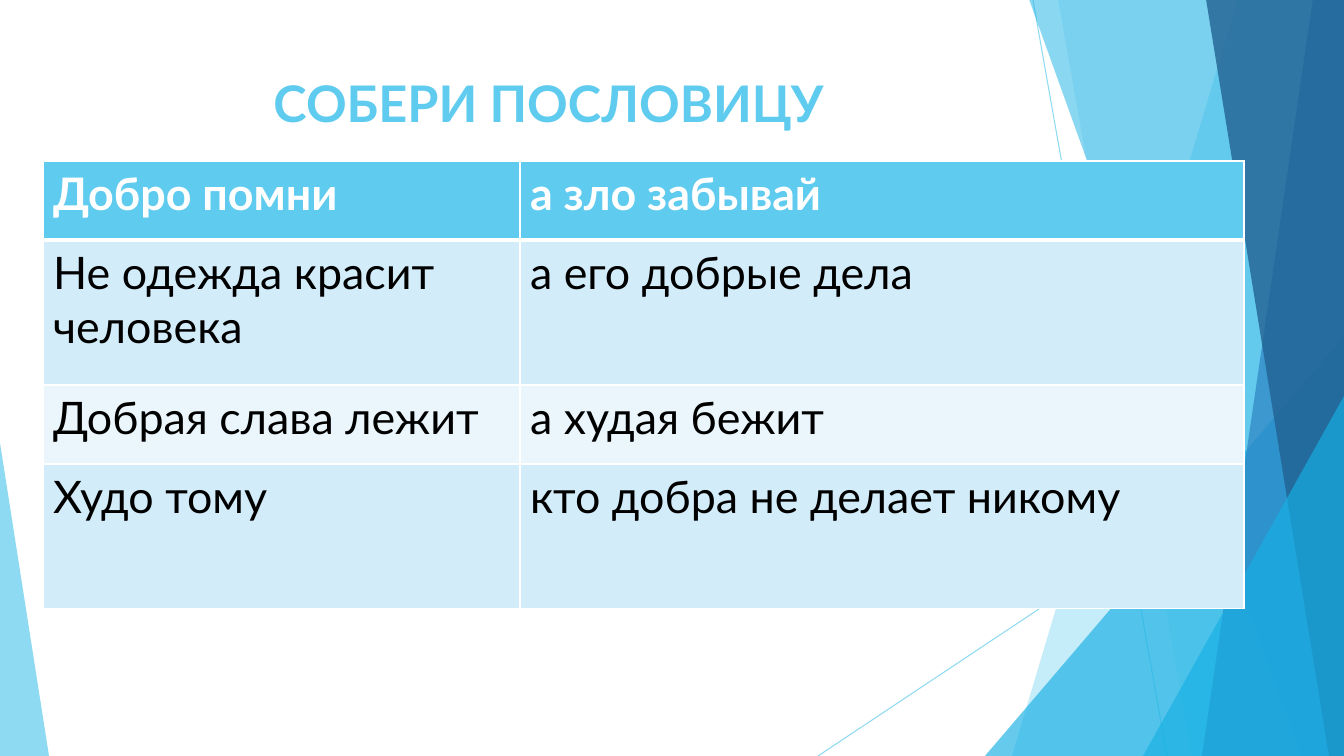
from dataclasses import dataclass

import pptx
import pptx.dml.color
import pptx.enum.shapes
import pptx.enum.text
import pptx.oxml
import pptx.oxml.ns
import pptx.util

PAGE_WIDTH, PAGE_HEIGHT = 1344, 756
EMU_PER_PX = 12192000 / PAGE_WIDTH


@dataclass(frozen=True)
class Theme:
    font: str = "Lato"
    title_size: int = 36
    table_size: int = 32
    sky: str = "5FCBEF"
    cyan: str = "17B0E4"
    blue: str = "2E83C3"
    navy: str = "226292"
    band: str = "D2ECF9"
    pale_band: str = "EAF6FC"
    white: str = "FFFFFF"
    black: str = "000000"


THEME = Theme()

PROVERBS = [
    ("Добро помни", "а зло забывай"),
    ("Не одежда красит человека", "а его добрые дела"),
    ("Добрая слава лежит", "а худая бежит"),
    ("Худо тому", "кто добра не делает никому"),
]


def px(length):
    return pptx.util.Emu(round(length * EMU_PER_PX))


def rgb(colour):
    return pptx.dml.color.RGBColor.from_string(colour)


def set_opacity(shape, percent):
    """Apply the opacity to every explicit colour of the shape."""
    for colour in shape._element.iter(pptx.oxml.ns.qn("a:srgbClr")):
        alpha = pptx.oxml.parse_xml(f'<a:alpha {pptx.oxml.ns.nsdecls("a")} val="{percent * 1000}"/>')
        colour.append(alpha)


def style_font(font, size, colour, bold):
    font.name = THEME.font
    font.size = pptx.util.Pt(size)
    font.color.rgb = rgb(colour)
    font.bold = bold


def paint(shape, colour, opacity):
    shape.shadow.inherit = False
    shape.fill.solid()
    shape.fill.fore_color.rgb = rgb(colour)
    shape.line.fill.background()
    set_opacity(shape, opacity)


def add_ray(slide, start, end):
    ray = slide.shapes.add_connector(
        pptx.enum.shapes.MSO_CONNECTOR.STRAIGHT, *map(px, start + end))
    ray.line.color.rgb = rgb(THEME.sky)
    ray.line.width = pptx.util.Pt(0.75)
    ray._element.spPr.append(
        pptx.oxml.parse_xml(f'<a:effectLst {pptx.oxml.ns.nsdecls("a")}/>'))
    set_opacity(ray, 70)


def add_facet(slide, box, top_x, bottom_x, colour, opacity):
    """Fill from a slanted left edge to the right side of the box."""
    left, top, width, height = box
    right, bottom = left + width, top + height
    outline = slide.shapes.build_freeform(left + top_x, top, scale=EMU_PER_PX)
    outline.add_line_segments(
        [(right, top), (right, bottom), (left + bottom_x, bottom)], close=True)
    paint(outline.convert_to_shape(), colour, opacity)


def add_corner(slide, box, apex, colour, opacity):
    corner = slide.shapes.add_shape(
        pptx.enum.shapes.MSO_SHAPE.ISOSCELES_TRIANGLE, *map(px, box))
    corner.adjustments[0] = apex
    paint(corner, colour, opacity)


def add_backdrop(slide, box):
    left, top, width, height = box
    right, bottom = left + width, top + height
    facets_box = (left, top - 1, width, height + 1)

    def right_corner(corner_width, corner_height):
        corner_box = (right - corner_width, bottom - corner_height,
                      corner_width, corner_height)
        add_corner(slide, corner_box, 1, THEME.cyan, 66)

    add_ray(slide, (left + 1033, top), (left + 1167, bottom))
    add_ray(slide, (right, top + 406), (left + 818, bottom))
    add_facet(slide, facets_box, 1238, 1012, THEME.sky, 36)
    add_facet(slide, facets_box, 1058, 1192, THEME.sky, 20)
    right_corner(359, 420)
    add_facet(slide, facets_box, 1029, 1301, THEME.cyan, 50)
    add_facet(slide, facets_box, 1313, 1202, THEME.blue, 70)
    add_facet(slide, facets_box, 1206, 1329, THEME.navy, 80)
    right_corner(201, 360)
    add_corner(slide, (left, bottom - 313, 49, 313), 0, THEME.sky, 70)


def add_heading(slide, box, wording):
    heading = slide.shapes.title
    heading.left, heading.top, heading.width, heading.height = map(px, box)
    frame = heading.text_frame
    frame.text = wording
    frame.word_wrap = True
    frame.auto_size = pptx.enum.text.MSO_AUTO_SIZE.NONE
    frame.vertical_anchor = pptx.enum.text.MSO_ANCHOR.TOP
    paragraph = frame.paragraphs[0]
    paragraph.alignment = pptx.enum.text.PP_ALIGN.CENTER
    style_font(paragraph.font, THEME.title_size, THEME.sky, True)


def set_borders(cell, top, bottom):
    """Draw white borders; side borders are 1 pt wide."""
    properties = cell._tc.get_or_add_tcPr()
    for side, points in (("L", 1), ("R", 1), ("T", top), ("B", bottom)):
        properties.append(pptx.oxml.parse_xml(
            f'<a:ln{side} {pptx.oxml.ns.nsdecls("a")} w="{pptx.util.Pt(points)}">'
            f'<a:solidFill><a:srgbClr val="{THEME.white}"/></a:solidFill></a:ln{side}>'))


def add_proverbs(slide, box, first_width, row_heights):
    left, top, width, height = box
    table = slide.shapes.add_table(len(PROVERBS), 2, *map(px, box)).table
    table.columns[0].width = px(first_width)
    table.columns[1].width = px(width - first_width)
    for row, proverb in enumerate(PROVERBS):
        table.rows[row].height = px(row_heights[row])
        header = row == 0
        if header:
            fill = THEME.sky
        else:
            fill = THEME.band if row % 2 else THEME.pale_band
        for column, wording in enumerate(proverb):
            cell = table.cell(row, column)
            cell.text = wording
            set_borders(cell, top=3 if row == 1 else 1, bottom=3 if header else 1)
            cell.fill.solid()
            cell.fill.fore_color.rgb = rgb(fill)
            style_font(cell.text_frame.paragraphs[0].font, THEME.table_size,
                       THEME.white if header else THEME.black, header)


def main():
    deck = pptx.Presentation()
    deck.slide_width, deck.slide_height = px(PAGE_WIDTH), px(PAGE_HEIGHT)
    slide = deck.slides.add_slide(deck.slide_layouts.get_by_name("Title Only"))
    add_backdrop(slide, (0, 0, PAGE_WIDTH, PAGE_HEIGHT))
    add_heading(slide, (75, 67, 947, 145), "СОБЕРИ ПОСЛОВИЦУ")
    add_proverbs(slide, (43, 161, 1201, 448), 477, (79, 145, 79, 145))
    deck.save("out.pptx")


if __name__ == "__main__":
    main()
